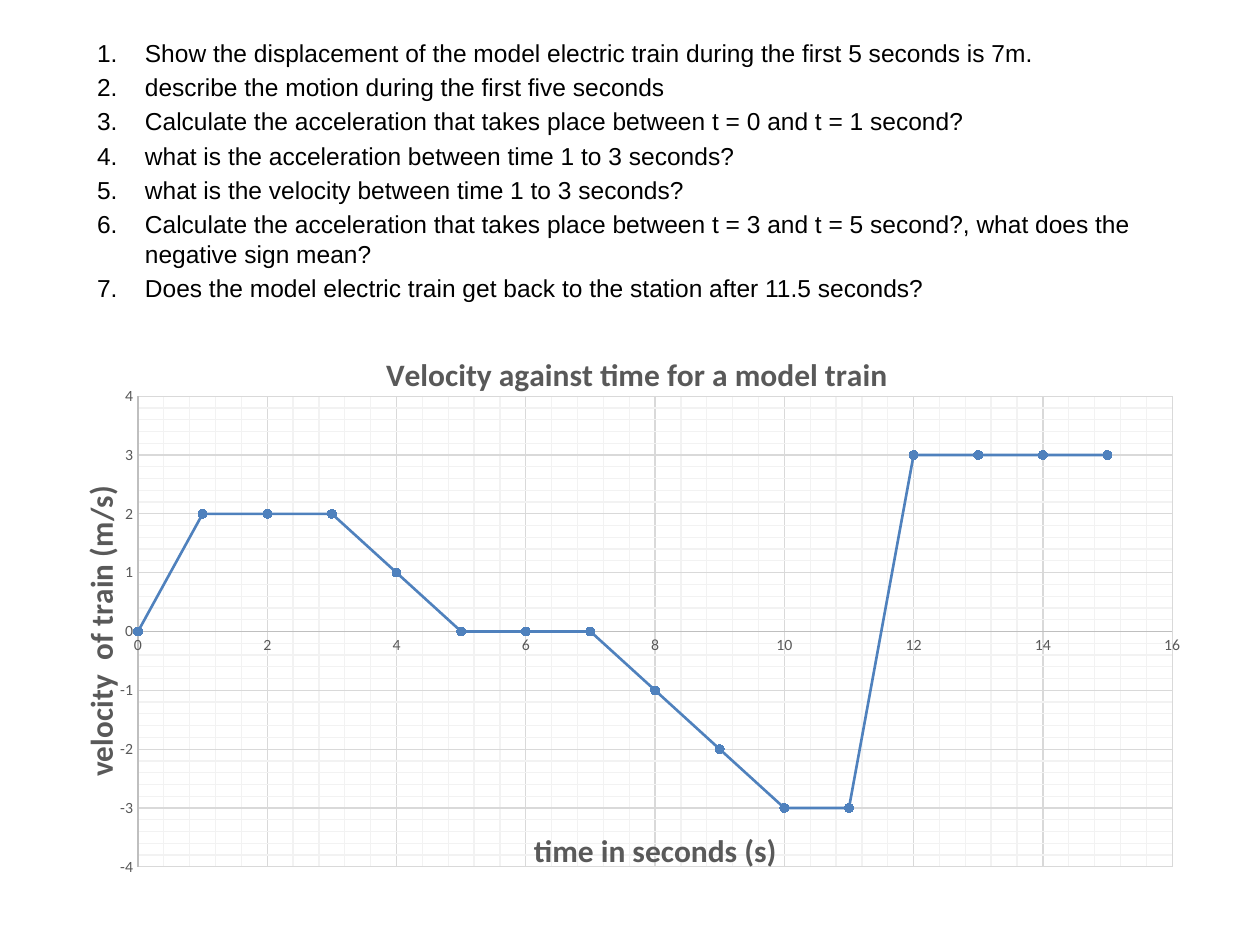
"""Build a slide of questions about a velocity-time graph of a model train."""
from copy import deepcopy

from lxml import etree
from pptx import Presentation, util as u
from pptx.chart.data import XyChartData
from pptx.dml.color import RGBColor
from pptx.enum import chart as ch
from pptx.oxml.ns import qn

QUESTIONS = [
    "Show the displacement of the model electric train during the first 5 seconds is 7m.",
    "describe the motion during the first five seconds",
    "Calculate the acceleration that takes place between t = 0 and t = 1 second?",
    "what is the acceleration between time 1 to 3 seconds?",
    "what is the velocity between time 1 to 3 seconds?",
    "Calculate the acceleration that takes place between t = 3 and t = 5 second?, "
    "what does the negative sign mean?",
    "Does the model electric train get back to the station after 11.5 seconds?",
]
VELOCITIES = [0, 2, 2, 2, 1, 0, 0, 0, -1, -2, -3, -3, 3, 3, 3, 3]
GREY, BLUE = "595959", "4F81BD"


def write(paragraph, text, size=18, bold=True, color=GREY, face="Calibri"):
    run = paragraph.add_run()
    run.text = text
    run.font.size, run.font.bold, run.font.name = u.Pt(size), bold, face
    run.font.color.rgb = RGBColor.from_string(color)


def place(part, index, **shares):
    for old in part.findall(qn("c:layout")):
        part.remove(old)
    layout = etree.Element(qn("c:layout"))
    manual = etree.SubElement(layout, qn("c:manualLayout"))
    for tag, value in shares.items():
        etree.SubElement(manual, qn("c:" + tag)).set("val", str(value))
    part.insert(index, layout)


prs = Presentation()
prs.slide_width, prs.slide_height = u.Inches(10), u.Inches(7.5)
slide = prs.slides.add_slide(prs.slide_layouts[1])
title = slide.shapes.title
title.element.getparent().remove(title.element)

questions = slide.placeholders[1]
questions.left, questions.top = u.Inches(0.67), u.Inches(0.25)
questions.width, questions.height = u.Inches(8.58), u.Inches(2.33)
frame = questions.text_frame
for number, question in enumerate(QUESTIONS):
    paragraph = frame.add_paragraph() if number else frame.paragraphs[0]
    write(paragraph, question, size=14, bold=False, color="000000", face="Arial")
    properties = paragraph._p.get_or_add_pPr()
    properties.set("marL", str(u.Inches(0.38)))
    properties.set("indent", str(-u.Inches(0.38)))
    etree.SubElement(properties, qn("a:buFont")).set("typeface", "Arial")
    etree.SubElement(properties, qn("a:buAutoNum")).set("type", "arabicPeriod")

data = XyChartData()
motion = data.add_series("Series 1")
for second, velocity in enumerate(VELOCITIES):
    motion.add_data_point(second, velocity)
graph = slide.shapes.add_chart(
    ch.XL_CHART_TYPE.XY_SCATTER_LINES, u.Inches(0.49), u.Inches(2.58),
    u.Inches(9.03), u.Inches(4.4), data).chart
graph.has_legend = False
graph.font.size, graph.font.name = u.Pt(10), "Calibri"
graph.has_title = True
write(graph.chart_title.text_frame.paragraphs[0], "Velocity against time for a model train")
place(graph.chart_title._element, 1, xMode="edge", yMode="edge", x=0.28, y=0.04)
place(graph._chartSpace.chart.plotArea, 0, layoutTarget="inner", xMode="edge",
      yMode="edge", x=0.067, y=0.13, w=0.909, h=0.86)

for axis, name, low, high, major, minor, x, y in [
    (graph.category_axis, "time in seconds (s)", 0, 16, 2, 0.4, 0.41, 0.91),
    (graph.value_axis, "velocity  of train (m/s)", -4, 4, 1, 0.2, 0.01, 0.29),
]:
    axis.minimum_scale, axis.maximum_scale = low, high
    axis.major_unit, axis.minor_unit = major, minor
    axis.major_tick_mark = axis.minor_tick_mark = ch.XL_TICK_MARK.NONE
    axis.tick_label_position = ch.XL_TICK_LABEL_POSITION.NEXT_TO_AXIS
    axis.has_major_gridlines = axis.has_minor_gridlines = True
    axis.format.line.width = u.Pt(0.75)
    axis.format.line.color.rgb = RGBColor.from_string("BFBFBF")
    grid = axis.major_gridlines.format.line
    grid.width = u.Pt(0.75)
    grid.color.rgb = RGBColor.from_string("F2F2F2")
    major_grid = axis._element.find(qn("c:majorGridlines"))
    axis._element.find(qn("c:minorGridlines")).append(deepcopy(major_grid.find(qn("c:spPr"))))
    grid.color.rgb = RGBColor.from_string("D9D9D9")
    labels = axis.tick_labels
    labels.number_format, labels.number_format_is_linked = "General", False
    labels.font.size, labels.font.name = u.Pt(9), "Calibri"
    labels.font.color.rgb = RGBColor.from_string(GREY)
    caption = axis.axis_title
    write(caption.text_frame.paragraphs[0], name)
    place(caption._element, 1, xMode="edge", yMode="edge", x=x, y=y)
upright = graph.value_axis.axis_title.text_frame._txBody.find(qn("a:bodyPr"))
upright.set("rot", "-5400000")
upright.set("vert", "horz")

plot = graph.plots[0]
plot.vary_by_categories = False
train = plot.series[0]
train.smooth = False
train.format.line.width = u.Pt(1.5)
train.format.line.color.rgb = RGBColor.from_string(BLUE)
train.marker.style, train.marker.size = ch.XL_MARKER_STYLE.CIRCLE, 5
train.marker.format.fill.solid()
train.marker.format.fill.fore_color.rgb = RGBColor.from_string(BLUE)
train.marker.format.line.color.rgb = RGBColor.from_string(BLUE)

prs.save("out.pptx")
